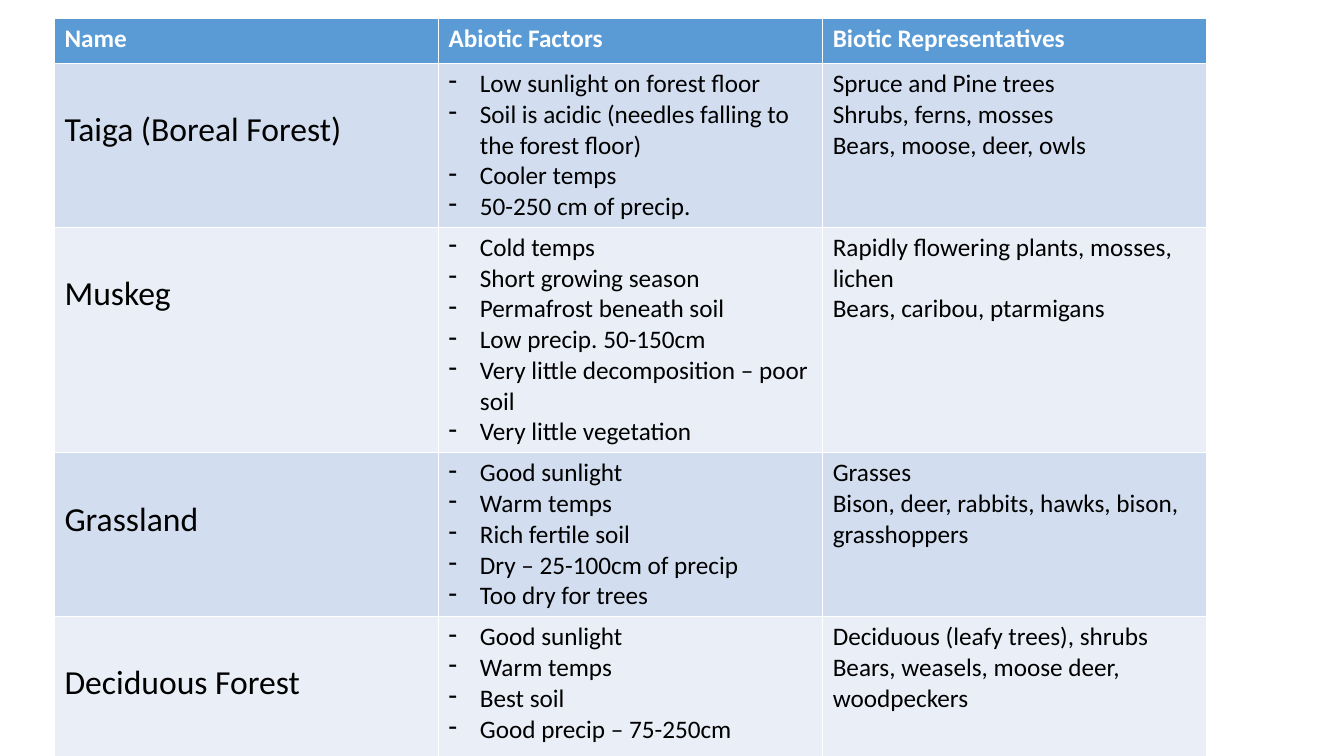
from dataclasses import dataclass

from lxml.etree import SubElement
from pptx import Presentation
from pptx.dml.color import RGBColor
from pptx.oxml.ns import qn
from pptx.table import _Cell
from pptx.util import Inches, Pt


@dataclass(frozen=True)
class Theme:
    font: str = "Calibri"
    header_fill: str = "5B9BD5"
    bands: tuple[str, str] = ("D2DEEF", "EAEFF7")
    header_text: str = "FFFFFF"
    text: str = "000000"
    body_size: int = 18
    name_size: int = 24


@dataclass(frozen=True)
class Biome:
    name: str
    height: float
    abiotic: list[str]
    biotic: list[str]


THEME = Theme()
HEADERS = ["Name", "Abiotic Factors", "Biotic Representatives"]
HEADER_HEIGHT = 0.45
COLUMN_WIDTH = 3.81
NAME_TOP_MARGIN = 0.46
BULLET_INDENT = 0.31

BIOMES = [
    Biome("Taiga (Boreal Forest)", 1.44,
          ["Low sunlight on forest floor",
           "Soil is acidic (needles falling to the forest floor)",
           "Cooler temps", "50-250 cm of precip."],
          ["Spruce and Pine trees", "Shrubs, ferns, mosses",
           "Bears, moose, deer, owls"]),
    Biome("Muskeg", 2.1,
          ["Cold temps", "Short growing season", "Permafrost beneath soil",
           "Low precip. 50-150cm", "Very little decomposition – poor soil",
           "Very little vegetation"],
          ["Rapidly flowering plants, mosses, lichen",
           "Bears, caribou, ptarmigans"]),
    Biome("Grassland", 1.44,
          ["Good sunlight", "Warm temps", "Rich fertile soil",
           "Dry – 25-100cm of precip", "Too dry for trees"],
          ["Grasses", "Bison, deer, rabbits, hawks, bison, grasshoppers"]),
    Biome("Deciduous Forest", 1.44,
          ["Good sunlight", "Warm temps", "Best soil",
           "Good precip – 75-250cm"],
          ["Deciduous (leafy trees), shrubs",
           "Bears, weasels, moose deer, woodpeckers"]),
]


def fill_cell(cell: _Cell, lines: list[str], fill: str, color: str = THEME.text,
              size: int = THEME.body_size, bold: bool = False,
              bulleted: bool = False) -> None:
    cell.fill.solid()
    cell.fill.fore_color.rgb = RGBColor.from_string(fill)
    tf = cell.text_frame
    for i, line in enumerate(lines):
        p = tf.add_paragraph() if i else tf.paragraphs[0]
        if bulleted:
            pPr = p._p.get_or_add_pPr()
            pPr.set("marL", str(Inches(BULLET_INDENT)))
            pPr.set("indent", str(-Inches(BULLET_INDENT)))
            SubElement(pPr, qn("a:buFontTx"))
            SubElement(pPr, qn("a:buChar")).set("char", "-")
        r = p.add_run()
        r.text = line
        r.font.name = THEME.font
        r.font.size = Pt(size)
        r.font.bold = bold
        r.font.color.rgb = RGBColor.from_string(color)


def main() -> None:
    prs = Presentation()
    prs.slide_width, prs.slide_height = Inches(13.33), Inches(7.5)
    s = prs.slides.add_slide(prs.slide_layouts[6])

    # Table grid
    heights = [HEADER_HEIGHT] + [biome.height for biome in BIOMES]
    table = s.shapes.add_table(
        len(heights), len(HEADERS), Inches(0.54), Inches(0.18),
        Inches(COLUMN_WIDTH * len(HEADERS)), Inches(sum(heights))).table
    for column in table.columns:
        column.width = Inches(COLUMN_WIDTH)
    for row, height in zip(table.rows, heights):
        row.height = Inches(height)

    # Header row
    for col, header in enumerate(HEADERS):
        fill_cell(table.cell(0, col), [header], THEME.header_fill,
                  color=THEME.header_text, bold=True)

    # Biome rows in alternating bands
    for i, biome in enumerate(BIOMES):
        band = THEME.bands[i % 2]
        name, abiotic, biotic = table.rows[i + 1].cells
        fill_cell(name, [biome.name], band, size=THEME.name_size)
        name.margin_top = Inches(NAME_TOP_MARGIN)
        fill_cell(abiotic, biome.abiotic, band, bulleted=True)
        fill_cell(biotic, biome.biotic, band)

    prs.save("out.pptx")


if __name__ == "__main__":
    main()
